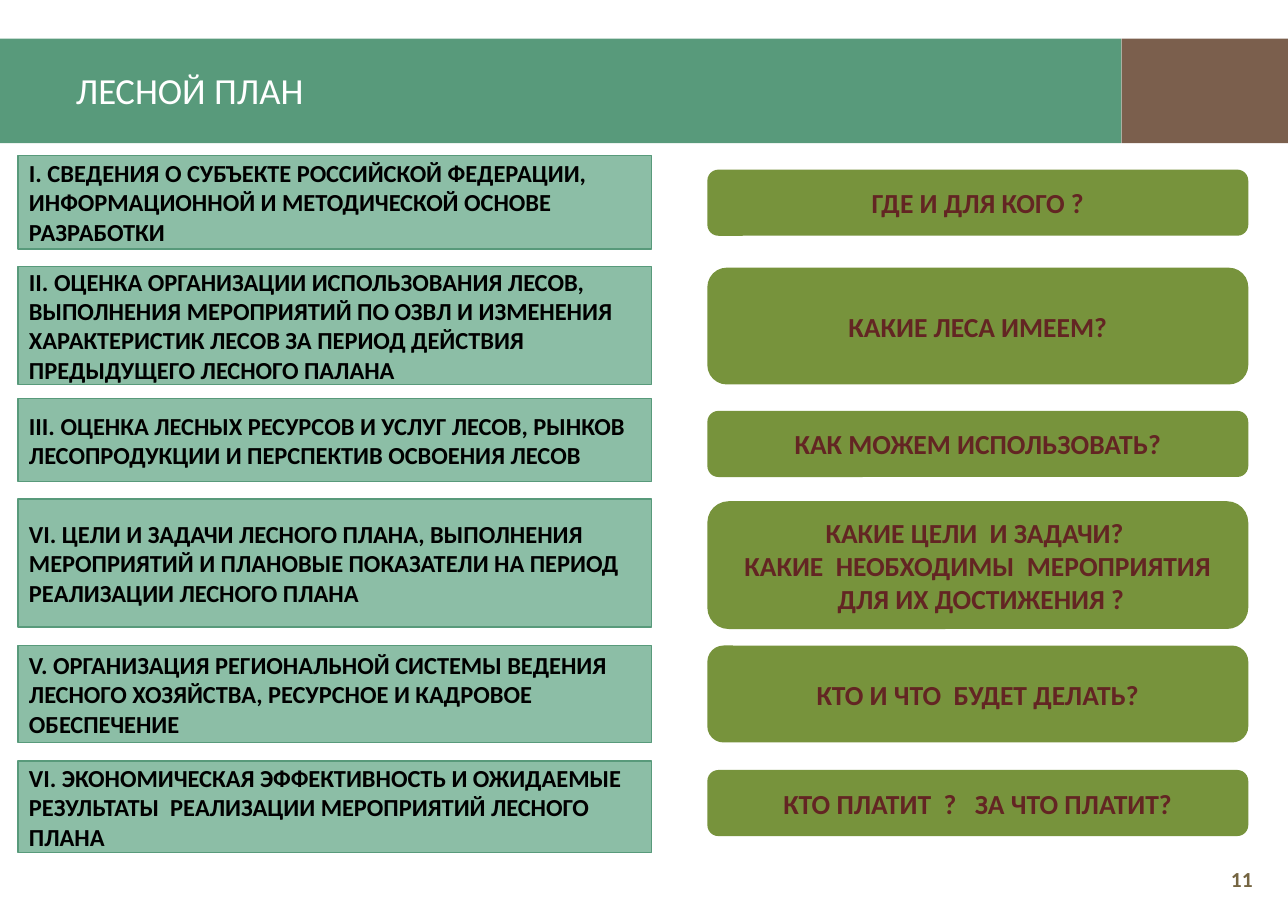
"""Build the forest plan slide: six plan sections beside the questions they answer."""
from pptx import Presentation
from pptx.dml.color import RGBColor
from pptx.enum.shapes import MSO_SHAPE as Shape
from pptx.enum.text import MSO_ANCHOR as Anchor, PP_ALIGN as Align
from pptx.util import Inches, Pt

TITLE = "ЛЕСНОЙ ПЛАН"
PAGE_NUMBER = "11"
FONT = "Calibri"
COLORS = {
    "band": "589A7B", "corner": "7B5F4D", "title": "FFFFFF", "number": "756542",
    "section": "8CBEA6", "section_text": "000000",
    "question": "77933C", "question_text": "632523",
}

# Each row: text, top and height in percent of the slide height
SECTIONS = [
    ("I. СВЕДЕНИЯ О СУБЪЕКТЕ РОССИЙСКОЙ ФЕДЕРАЦИИ, ИНФОРМАЦИОННОЙ И "
     "МЕТОДИЧЕСКОЙ ОСНОВЕ РАЗРАБОТКИ", 17.05, 10.28),
    ("II. ОЦЕНКА ОРГАНИЗАЦИИ ИСПОЛЬЗОВАНИЯ ЛЕСОВ, ВЫПОЛНЕНИЯ МЕРОПРИЯТИЙ ПО "
     "ОЗВЛ И ИЗМЕНЕНИЯ ХАРАКТЕРИСТИК ЛЕСОВ ЗА ПЕРИОД ДЕЙСТВИЯ ПРЕДЫДУЩЕГО "
     "ЛЕСНОГО ПАЛАНА", 29.26, 12.94),
    ("III. ОЦЕНКА ЛЕСНЫХ РЕСУРСОВ И УСЛУГ ЛЕСОВ, РЫНКОВ ЛЕСОПРОДУКЦИИ И "
     "ПЕРСПЕКТИВ ОСВОЕНИЯ ЛЕСОВ", 43.77, 9.07),
    ("VI. ЦЕЛИ И ЗАДАЧИ ЛЕСНОГО ПЛАНА, ВЫПОЛНЕНИЯ МЕРОПРИЯТИЙ И ПЛАНОВЫЕ "
     "ПОКАЗАТЕЛИ НА ПЕРИОД РЕАЛИЗАЦИИ ЛЕСНОГО ПЛАНА", 54.78, 14.03),
    ("V. ОРГАНИЗАЦИЯ РЕГИОНАЛЬНОЙ СИСТЕМЫ ВЕДЕНИЯ ЛЕСНОГО ХОЗЯЙСТВА, "
     "РЕСУРСНОЕ И КАДРОВОЕ ОБЕСПЕЧЕНИЕ", 70.86, 10.64),
    ("VI. ЭКОНОМИЧЕСКАЯ ЭФФЕКТИВНОСТЬ И ОЖИДАЕМЫЕ РЕЗУЛЬТАТЫ  РЕАЛИЗАЦИИ "
     "МЕРОПРИЯТИЙ ЛЕСНОГО ПЛАНА", 83.56, 10.04),
]
QUESTIONS = [
    ("ГДЕ И ДЛЯ КОГО ?", 18.62, 7.26),
    ("КАКИЕ ЛЕСА ИМЕЕМ?", 29.38, 12.82),
    ("КАК МОЖЕМ ИСПОЛЬЗОВАТЬ?", 45.1, 7.26),
    ("КАКИЕ ЦЕЛИ  И ЗАДАЧИ? \nКАКИЕ  НЕОБХОДИМЫ  МЕРОПРИЯТИЯ\v ДЛЯ ИХ ДОСТИЖЕНИЯ ?",
     55.02, 14.03),
    ("КТО И ЧТО  БУДЕТ ДЕЛАТЬ?", 70.86, 10.64),
    ("КТО ПЛАТИТ  ?   ЗА ЧТО ПЛАТИТ?", 84.52, 7.26),
]
SECTION_COLUMN = (1.41, 49.19)
QUESTION_COLUMN = (54.92, 42)
BAND_ROW = (4.23, 11.49)
BAND_WIDTH = 87.08

deck = Presentation()
deck.slide_width, deck.slide_height = Inches(11.69), Inches(8.27)
slide = deck.slides.add_slide(deck.slide_layouts[6])


def place(column, row):
    """Turn percent shares of the slide into left, top, width and height."""
    (left, width), (top, height) = column, row
    across, down = deck.slide_width / 100, deck.slide_height / 100
    return [round(size) for size in
            (left * across, top * down, width * across, height * down)]


def add_panel(column, row, color, kind=Shape.RECTANGLE, outline=None):
    panel = slide.shapes.add_shape(kind, *place(column, row))
    panel.shadow.inherit = False
    panel.fill.solid()
    panel.fill.fore_color.rgb = RGBColor.from_string(COLORS[color])
    if outline:
        panel.line.color.rgb = RGBColor.from_string(COLORS[outline])
        panel.line.width = Pt(1)
    else:
        panel.line.fill.background()
    return panel


def write(holder, text, *, size, color, bold=True, align=Align.LEFT, side=0.1, edge=0.06):
    frame = holder.text_frame
    frame.word_wrap = True
    frame.vertical_anchor = Anchor.MIDDLE
    frame.margin_left = frame.margin_right = Inches(side)
    frame.margin_top = frame.margin_bottom = Inches(edge)
    frame.text = text
    for paragraph in frame.paragraphs:
        paragraph.alignment = align
        font = paragraph.font
        font.name, font.size, font.bold = FONT, Pt(size), bold
        font.color.rgb = RGBColor.from_string(COLORS[color])


add_panel((0, BAND_WIDTH), BAND_ROW, "band")
add_panel((BAND_WIDTH, 100 - BAND_WIDTH), BAND_ROW, "corner")
heading = slide.shapes.add_textbox(*place((4.96, 90.08), (3.99, 11.73)))
write(heading, TITLE, size=24, color="title", bold=False, side=0.11)
number = slide.shapes.add_textbox(*place((92.3, 5.9), (93.83, 5.32)))
write(number, PAGE_NUMBER, size=14, color="number", align=Align.RIGHT, side=0.11)

for text, *row in SECTIONS:
    section = add_panel(SECTION_COLUMN, row, "section", outline="band")
    write(section, text, size=16, color="section_text", edge=0.05)

for text, *row in QUESTIONS:
    question = add_panel(QUESTION_COLUMN, row, "question", Shape.ROUNDED_RECTANGLE)
    write(question, text, size=18, color="question_text", align=Align.CENTER, side=0)

deck.save("out.pptx")
